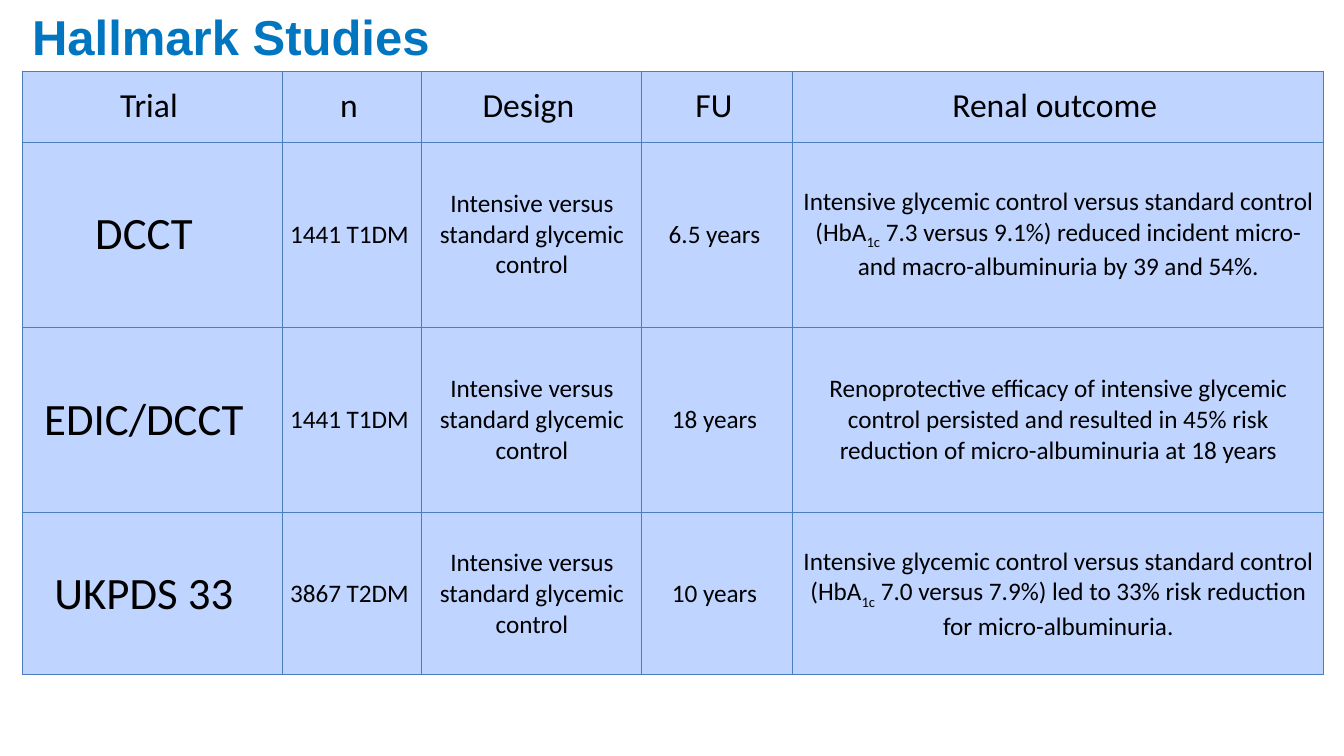
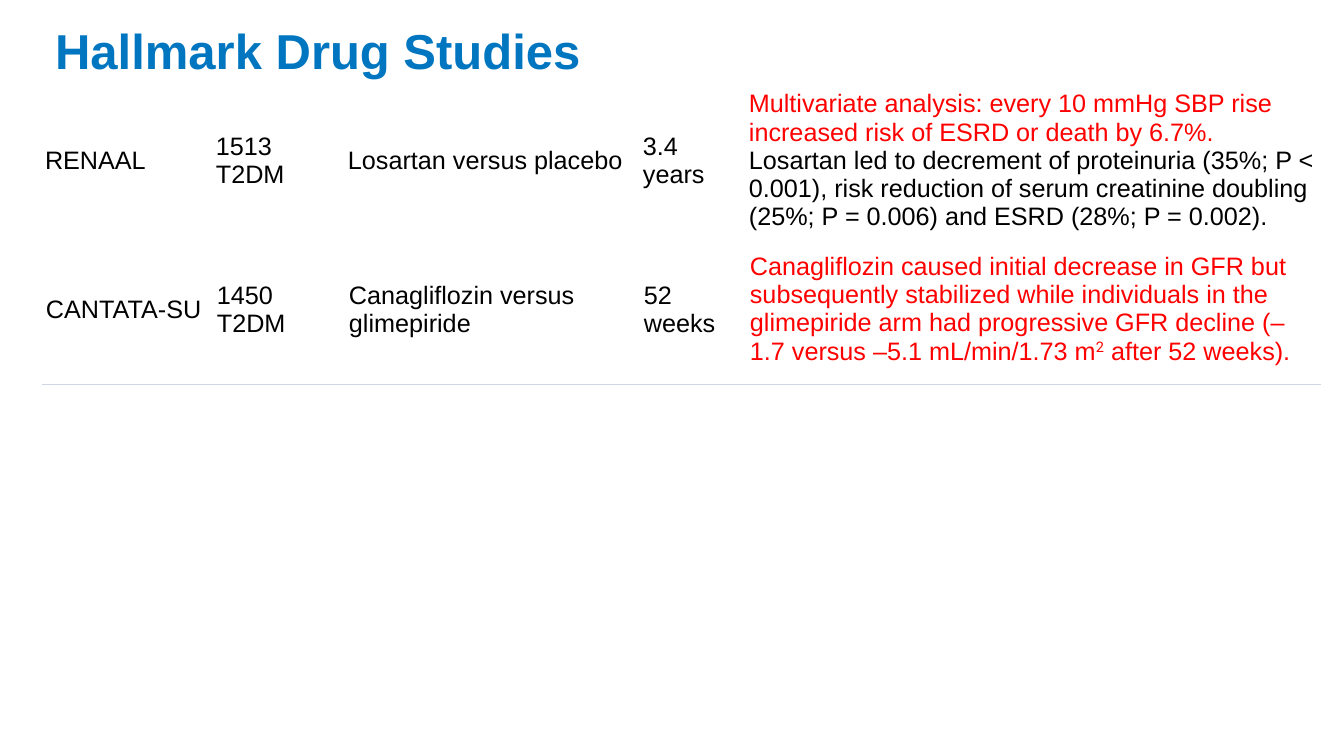
"""Build two slides that tabulate hallmark renal outcome studies."""
from lxml.etree import SubElement
from pptx import Presentation
from pptx.dml.color import RGBColor
from pptx.enum.text import MSO_ANCHOR, MSO_AUTO_SIZE, PP_ALIGN
from pptx.oxml.ns import qn
from pptx.util import Emu, Pt

PX = 12192000 / 1344
TITLE_BLUE = RGBColor(0x00, 0x76, 0xC0)
CELL_BLUE = RGBColor(0xBF, 0xD4, 0xFF)
GRID_BLUE = RGBColor(0x4B, 0x7E, 0xBC)
RULE_GREY = RGBColor(0xCF, 0xD5, 0xE4)
BLACK = RGBColor(0x00, 0x00, 0x00)
RED = RGBColor(0xFF, 0x00, 0x00)
WHITE = RGBColor(0xFF, 0xFF, 0xFF)


def put(p, text, size=18, font="Arial", color=BLACK, bold=False, baseline=0):
    r = p.add_run()
    r.text = text
    r.font.size = Pt(size)
    r.font.name = font
    r.font.color.rgb = color
    r.font.bold = bold
    if baseline:
        r.font._element.set("baseline", str(baseline * 1000))


def style_cell(cell, fill, margins, sides="", line=None, width=0.0):
    cell.margin_left, cell.margin_top, cell.margin_right, cell.margin_bottom = (
        Emu(round(m * PX)) for m in margins)
    cell.vertical_anchor = MSO_ANCHOR.MIDDLE
    tcPr = cell._tc.get_or_add_tcPr()
    for side in sides:
        ln = SubElement(tcPr, qn(f"a:ln{side}"), w=str(Pt(width)))
        SubElement(SubElement(ln, qn("a:solidFill")), qn("a:srgbClr"), val=str(line))
    cell.fill.solid()
    cell.fill.fore_color.rgb = fill


DESIGN = "Intensive versus standard glycemic control"
CONTROL = "Intensive glycemic control versus standard control (HbA"
SUB = {"baseline": -25}
trials = [
    ["Trial", "n", "Design", "FU", "Renal outcome"],
    ["DCCT", "1441 T1DM", DESIGN, "6.5 years",
     [(CONTROL, {}), ("1c", SUB),
      (" 7.3 versus 9.1%) reduced incident micro- and macro-albuminuria by 39 and 54%.", {})]],
    ["EDIC/DCCT", "1441 T1DM", DESIGN, "18 years",
     "Renoprotective efficacy of intensive glycemic control persisted and resulted in "
     "45% risk reduction of micro-albuminuria at 18 years"],
    ["UKPDS 33", "3867 T2DM", DESIGN, "10 years",
     [(CONTROL, {}), ("1c", SUB),
      (" 7.0 versus 7.9%) led to 33% risk reduction for micro-albuminuria.", {})]],
]
drugs = [
    ["RENAAL", "1513 T2DM", "Losartan versus placebo", "3.4 years",
     [("Multivariate analysis: every 10 mmHg SBP rise increased risk of ESRD or death by 6.7%.",
       {"color": RED}),
      (" Losartan led to decrement of proteinuria (35%; P < 0.001), risk reduction of serum "
       "creatinine doubling (25%; P = 0.006) and ESRD (28%; P = 0.002).", {})]],
    ["CANTATA-SU", "1450 T2DM", "Canagliflozin versus glimepiride", "52 weeks",
     [("Canagliflozin caused initial decrease in GFR but subsequently stabilized while "
       "individuals in the glimepiride arm had progressive GFR decline "
       "(–1.7 versus –5.1 mL/min/1.73 m", {"color": RED}),
      ("2", {"color": RED, "font": "Roboto", "baseline": 30}),
      (" after 52 weeks).", {"color": RED})]],
]
slides = [
    ("Hallmark Studies", (22, 0, 1261, 72), trials, (22, 71),
     (261, 139, 220, 151, 531), (71, 185, 186, 162)),
    ("Hallmark Drug Studies", (45, 14, 1210, 72), drugs, (43, 86),
     (171, 132, 295, 106, 573), (149, 149)),
]
TRIAL_RIGHTS = (20, 9, 3, 9, 3)

prs = Presentation()
prs.slide_width, prs.slide_height = Emu(round(1344 * PX)), Emu(round(756 * PX))

for heading, box, rows, (left, top), widths, heights in slides:
    s = prs.slides.add_slide(prs.slide_layouts[5])
    title = s.shapes.title
    title.left, title.top, title.width, title.height = (Emu(round(v * PX)) for v in box)
    tf = title.text_frame
    tf.auto_size = MSO_AUTO_SIZE.NONE
    tf.vertical_anchor = MSO_ANCHOR.MIDDLE
    tf.paragraphs[0].alignment = PP_ALIGN.LEFT
    put(tf.paragraphs[0], heading, size=35, color=TITLE_BLUE, bold=True)

    frame = (left, top, sum(widths), sum(heights))
    table = s.shapes.add_table(len(rows), len(widths),
                               *(Emu(round(v * PX)) for v in frame)).table
    table.first_row = table.horz_banding = False
    for col, w in zip(table.columns, widths):
        col.width = Emu(round(w * PX))
    for row, h in zip(table.rows, heights):
        row.height = Emu(round(h * PX))

    for i, row in enumerate(rows):
        for j, content in enumerate(row):
            cell = table.cell(i, j)
            p = cell.text_frame.paragraphs[0]
            if rows is trials:
                right = TRIAL_RIGHTS[j] if i else 10
                style_cell(cell, CELL_BLUE, (3, 2, right, 2), "LRTB", GRID_BLUE, 0.75)
                p.alignment = PP_ALIGN.CENTER
                size, font = 24 if i == 0 else 32 if j == 0 else 18, "Calibri"
            else:
                side = 2 + i
                style_cell(cell, WHITE, (side, 1, side, 1), "B" if i else "", RULE_GREY, 0.6)
                size, font = 18, "Arial"
            runs = [(content, {})] if isinstance(content, str) else content
            for text, fmt in runs:
                put(p, text, **{"size": size, "font": font, **fmt})

prs.save("out.pptx")
